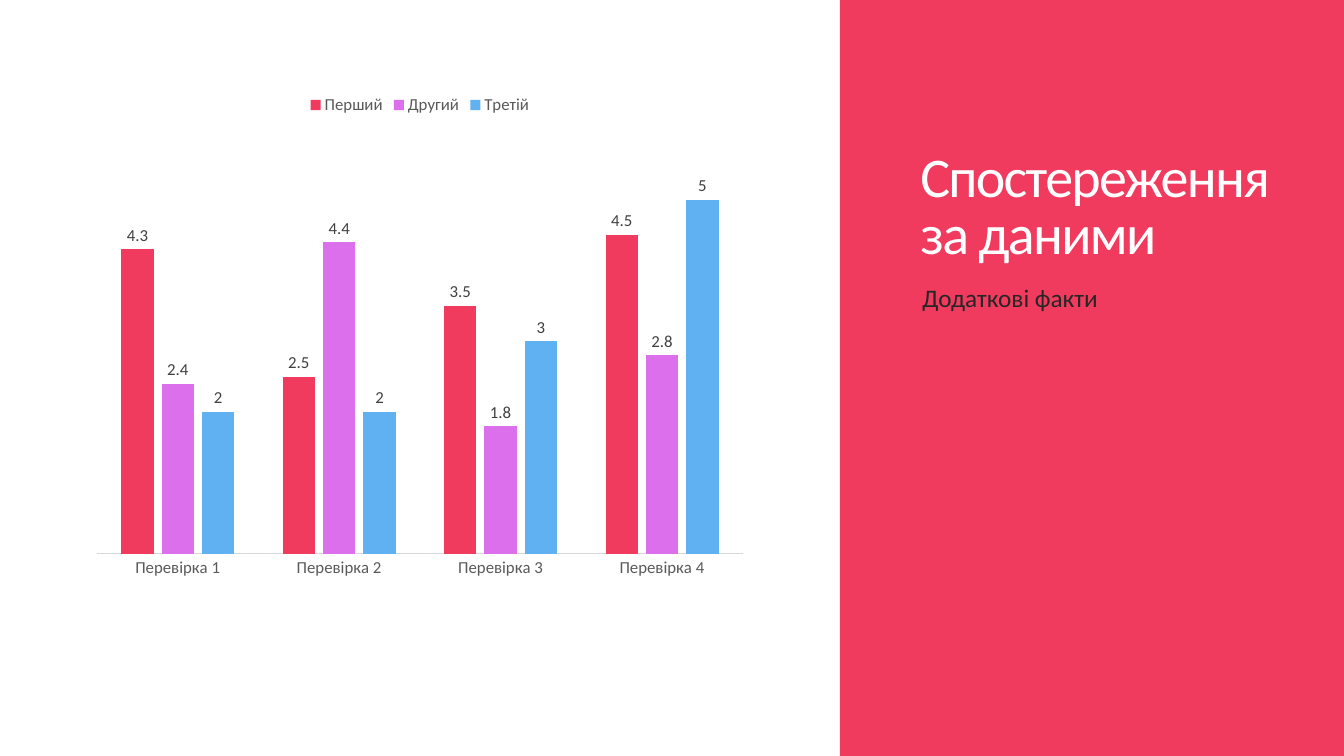
"""Build a slide with a clustered column chart and a coloured side panel."""
from pptx import Presentation
from pptx.chart.data import CategoryChartData
from pptx.dml.color import RGBColor
from pptx.enum.chart import XL_CHART_TYPE as CHART, XL_LABEL_POSITION as LABEL
from pptx.enum.chart import XL_LEGEND_POSITION as LEGEND, XL_TICK_MARK as TICK
from pptx.enum.shapes import MSO_SHAPE as SHAPE
from pptx.enum.text import MSO_ANCHOR as ANCHOR
from pptx.util import Inches, Pt

FONT = "Calibri"
COLORS = {
    "red": "F03B5E", "violet": "DC6FEC", "blue": "60B1F2", "white": "FFFFFF",
    "dark": "262626", "label": "404040", "axis": "595959", "rule": "D9D9D9",
}
CHECKS = [f"Перевірка {n}" for n in range(1, 5)]
SERIES = [
    ("Перший", "red", (4.3, 2.5, 3.5, 4.5)),
    ("Другий", "violet", (2.4, 4.4, 1.8, 2.8)),
    ("Третій", "blue", (2, 2, 3, 5)),
]


def rgb(name):
    return RGBColor.from_string(COLORS[name])


def set_attrs(obj, values):
    for name, value in values.items():
        setattr(obj, name, value)


def set_font(font, size, color):
    set_attrs(font, {"name": FONT, "size": Pt(size)})
    font.color.rgb = rgb(color)


def set_fill(obj, color):
    obj.fill.solid()
    obj.fill.fore_color.rgb = rgb(color)


def add_panel(s, box, color):
    sp = s.shapes.add_shape(SHAPE.RECTANGLE, *map(Inches, box))
    sp.shadow.inherit = False
    set_fill(sp, color)
    sp.line.fill.background()


def add_text(s, box, text, size, color, anchor, para, spacing=0):
    tf = s.shapes.add_textbox(*map(Inches, box)).text_frame
    set_attrs(tf, {"word_wrap": True, "vertical_anchor": anchor})
    p = tf.paragraphs[0]
    set_attrs(p, para)
    r = p.add_run()
    r.text = text
    set_font(r.font, size, color)
    if spacing:
        r.font._element.set("spc", str(round(spacing * 100)))


def add_columns(s, box):
    data = CategoryChartData()
    data.categories = CHECKS
    for name, _, values in SERIES:
        data.add_series(name, values)
    chart = s.shapes.add_chart(
        CHART.COLUMN_CLUSTERED, *map(Inches, box), data).chart
    set_attrs(chart, {"has_title": False, "has_legend": True})
    chart.font.name = FONT
    set_attrs(chart.legend,
              {"position": LEGEND.TOP, "include_in_layout": False})
    set_font(chart.legend.font, 12, "axis")
    format_axes(chart)
    format_series(chart.plots[0])


def format_axes(chart):
    set_attrs(chart.value_axis, {
        "visible": False, "has_major_gridlines": False,
        "minimum_scale": 0, "maximum_scale": 6})
    axis = chart.category_axis
    set_attrs(axis, {"major_tick_mark": TICK.NONE,
                     "minor_tick_mark": TICK.NONE})
    set_font(axis.tick_labels.font, 12, "axis")
    axis.format.line.width = Pt(0.75)
    axis.format.line.color.rgb = rgb("rule")


def format_series(plot):
    set_attrs(plot, {
        "gap_width": 150, "overlap": -25, "vary_by_categories": False})
    for series, (_, color, _) in zip(plot.series, SERIES):
        set_fill(series.format, color)
        labels = series.data_labels
        set_attrs(labels, {
            "show_value": True, "position": LABEL.OUTSIDE_END})
        set_font(labels.font, 12, "label")


def main():
    prs = Presentation()
    set_attrs(prs, {"slide_width": Inches(13.33),
                    "slide_height": Inches(7.5)})
    s = prs.slides.add_slide(prs.slide_layouts[6])
    set_fill(s.background, "white")
    add_panel(s, (8.33, 0, 5, 7.5), "red")
    add_text(s, (9.03, 0.59, 3.7, 2.1), "Спостереження за даними", 40, "white",
             ANCHOR.BOTTOM, {"line_spacing": 0.85}, spacing=-1.2)
    add_text(s, (9.05, 2.75, 3.72, 3.42), "Додаткові факти", 18, "dark",
             ANCHOR.TOP, {"space_before": Pt(12)})
    add_columns(s, (0.83, 0.83, 6.67, 5))
    prs.save("out.pptx")


if __name__ == "__main__":
    main()
